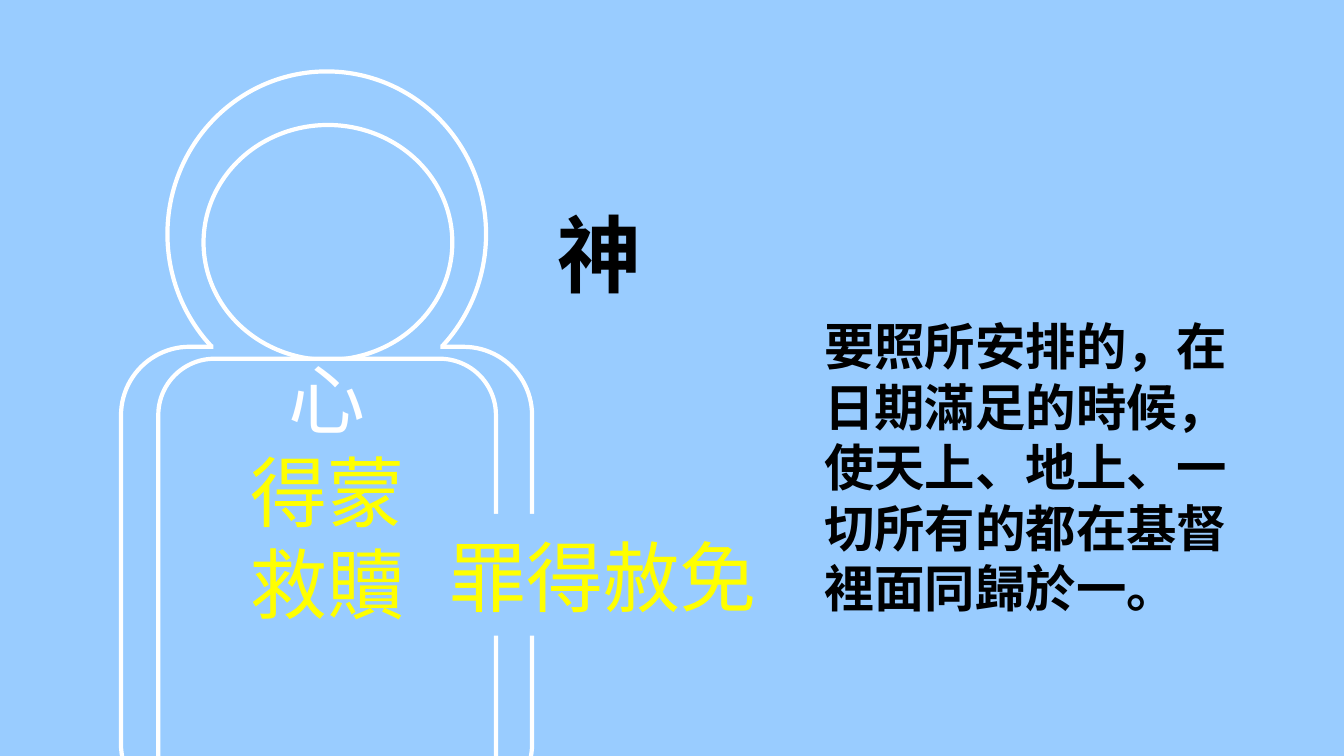
import pptx
import pptx.dml.color
import pptx.enum.shapes
import pptx.enum.text
import pptx.util
from dataclasses import dataclass

Cm = pptx.util.Cm
Pt = pptx.util.Pt
SHAPE = pptx.enum.shapes.MSO_SHAPE
ALIGN = pptx.enum.text.PP_ALIGN


def rgb(value):
    return pptx.dml.color.RGBColor.from_string(value)


@dataclass(frozen=True)
class Theme:
    sky: str = "99CCFF"
    white: str = "FFFFFF"
    yellow: str = "FFFF00"
    black: str = "000000"
    outline: float = 3
    label_font: str = "Roboto"
    verse_font: str = "Lato"
    label_size: int = 55
    heading_size: int = 60
    verse_size: int = 36


class SlideBuilder:
    def __init__(self, slide, theme):
        self.slide = slide
        self.theme = theme
        background = slide.background.fill
        background.solid()
        background.fore_color.rgb = rgb(theme.sky)

    def shape(self, kind, box, outlined=True):
        """Add a sky-coloured shape, with a white outline or with none."""
        shape = self.slide.shapes.add_shape(kind, *map(Cm, box))
        shape.shadow.inherit = False
        shape.fill.solid()
        shape.fill.fore_color.rgb = rgb(self.theme.sky)
        if outlined:
            shape.line.color.rgb = rgb(self.theme.white)
            shape.line.width = Pt(self.theme.outline)
        else:
            shape.line.fill.background()

    def text(self, box, lines, font, size, bold=False, align=ALIGN.LEFT):
        """Add a text box; lines holds one (wording, colour) per paragraph."""
        frame = self.slide.shapes.add_textbox(*map(Cm, box)).text_frame
        frame.word_wrap = True
        font_format = {"name": font, "size": Pt(size), "bold": bold}
        for index, (wording, colour) in enumerate(lines):
            paragraph = frame.add_paragraph() if index else frame.paragraphs[0]
            paragraph.text = wording
            paragraph.alignment = align
            for run in paragraph.runs:
                for key, value in font_format.items():
                    setattr(run.font, key, value)
                run.font.color.rgb = rgb(colour)

    def label(self, box, lines):
        self.text(box, lines, self.theme.label_font, self.theme.label_size,
                  align=ALIGN.CENTER)


def main():
    theme = Theme()
    deck = pptx.Presentation()
    deck.slide_width, deck.slide_height = Cm(33.87), Cm(19.05)
    blank_layout = deck.slide_layouts[6]
    builder = SlideBuilder(deck.slides.add_slide(blank_layout), theme)

    # Outer figure, opened at the neck
    builder.shape(SHAPE.OVAL, (4.22, 1.8, 8.03, 8.2))
    builder.shape(SHAPE.ROUNDED_RECTANGLE, (3.05, 8.74, 10.36, 11.73))
    builder.shape(SHAPE.RECTANGLE, (5.38, 8.36, 5.72, 0.89), outlined=False)

    # Inner figure
    builder.shape(SHAPE.OVAL, (5.13, 3.15, 6.27, 5.92))
    builder.shape(SHAPE.ROUNDED_RECTANGLE, (3.99, 9.04, 8.51, 11.51))

    # Words in the heart
    builder.label((3.99, 8.74, 8.51, 7.32),
                  [("心", theme.white), ("得蒙\v救贖", theme.yellow)])

    # Forgiveness crossing the gap in the figure's side
    builder.shape(SHAPE.RECTANGLE, (12.01, 12.95, 8.86, 3.07), outlined=False)
    builder.label((10.49, 13.21, 9.42, 2.62), [("罪得赦免", theme.yellow)])

    # God and the verse
    builder.text((13.79, 4.98, 4, 2.8), [("神", theme.black)],
                 theme.verse_font, theme.heading_size, bold=True)
    verse = "要照所安排的，在日期滿足的時候，使天上、地上、一切所有的都在基督裡面同歸於一。"
    builder.text((20.52, 7.82, 11.56, 7.95), [(verse, theme.black)],
                 theme.verse_font, theme.verse_size, bold=True)

    deck.save("out.pptx")


if __name__ == "__main__":
    main()
